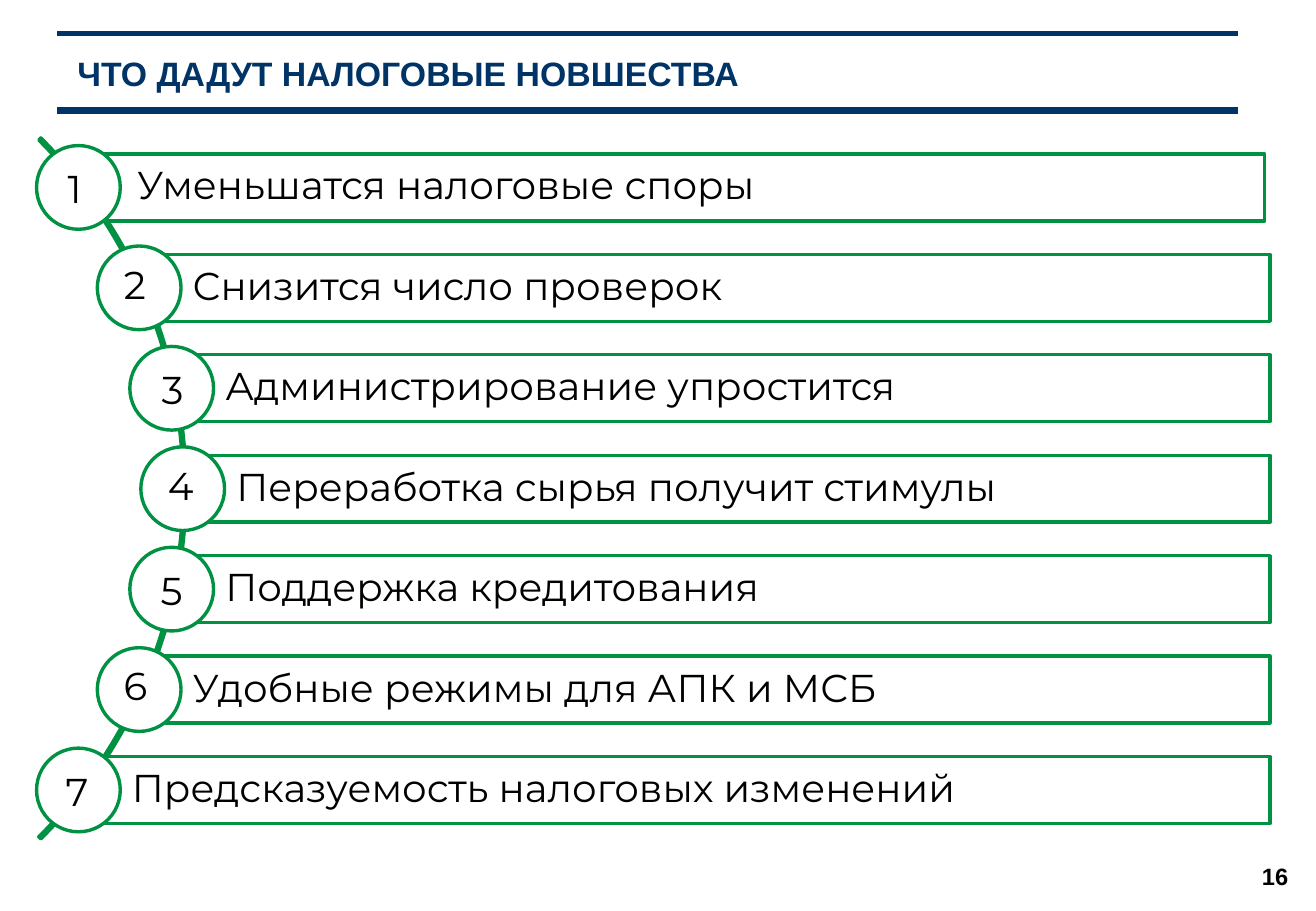
from lxml import etree
from pptx import Presentation
from pptx.dml.color import RGBColor
from pptx.enum.shapes import MSO_CONNECTOR as Link, MSO_SHAPE as Form
from pptx.enum.text import MSO_ANCHOR as Anchor, PP_ALIGN as Align
from pptx.oxml.ns import qn
from pptx.util import Cm, Pt

NAVY, GREEN, WHITE, BLACK = "003366", "009242", "FFFFFF", "000000"


def paint(shape, fill, line):
    """Set fill and outline; None leaves the part empty."""
    shape.shadow.inherit = False
    for part, color in ((shape.fill, fill), (shape.line.fill, line)):
        if color:
            part.solid()
            part.fore_color.rgb = RGBColor.from_string(color)
        else:
            part.background()
    if line:
        shape.line.width = Pt(2)


def write(shape, text, size, font, color, align=Align.LEFT, bold=False, anchor=Anchor.MIDDLE):
    frame = shape.text_frame
    frame.word_wrap = True
    frame.vertical_anchor = anchor
    para = frame.paragraphs[0]
    para.alignment = align
    span = para.add_run()
    span.text = text
    span.font.size = Pt(size)
    span.font.name = font
    span.font.bold = bold
    span.font.color.rgb = RGBColor.from_string(color)


deck = Presentation()
deck.slide_width, deck.slide_height = Cm(27.51), Cm(19.05)
page = deck.slides.add_slide(deck.slide_layouts[6])
shapes = page.shapes

# Header rules
for y, weight in ((2.31, 4.5), (0.71, 3)):
    rule = shapes.add_connector(Link.STRAIGHT, Cm(25.88), Cm(y), Cm(1.19), Cm(y))
    rule.line.color.rgb = RGBColor.from_string(NAVY)
    rule.line.width = Pt(weight)
    etree.SubElement(rule._element.spPr, qn("a:effectLst"))

# Page number and title
number = shapes.add_shape(Form.RECTANGLE, Cm(25.83), Cm(17.63), Cm(1.65), Cm(1.4))
paint(number, WHITE, None)
write(number, "16", 14, "Arial", BLACK, Align.CENTER, bold=True)
title = shapes.add_textbox(Cm(1.37), Cm(0.76), Cm(24.36), Cm(1.55))
write(title, "ЧТО ДАДУТ НАЛОГОВЫЕ НОВШЕСТВА", 20, "Arial", NAVY, bold=True)

# Arc behind the list
arc = shapes.add_shape(Form.BLOCK_ARC, Cm(-16.84), Cm(-0.15), Cm(20.73), Cm(20.73))
for index, value in enumerate((189, 27, 0.003)):
    arc.adjustments[index] = value
paint(arc, None, GREEN)

# Rows: text, circle centre, bar left, bar right, digit centre, digit top
rows = (
    ("Уменьшатся налоговые споры", 1.64, 1.75, 26.44, 1.56, 3.33),
    ("Снизится число проверок", 2.91, 2.91, 26.55, 2.82, 5.33),
    ("Администрирование упростится", 3.59, 3.59, 26.55, 3.61, 7.52),
    ("Переработка сырья получит стимулы", 3.82, 3.82, 26.55, 3.78, 9.53),
    ("Поддержка кредитования", 3.59, 3.59, 26.55, 3.59, 11.73),
    ("Удобные режимы для АПК и МСБ", 2.91, 2.91, 26.55, 2.83, 13.72),
    ("Предсказуемость налоговых изменений", 1.64, 1.64, 26.55, 1.61, 15.93),
)
FIRST, PITCH, BAR, CIRCLE, DIGIT = 3.92, 2.1, 1.4, 1.75, 1.57

for index, (text, center, left, right, digit_x, digit_y) in enumerate(rows):
    middle = FIRST + index * PITCH

    bar = shapes.add_shape(Form.RECTANGLE, Cm(left), Cm(middle - BAR / 2), Cm(right - left), Cm(BAR))
    paint(bar, WHITE, GREEN)
    write(bar, text, 23, "Montserrat", BLACK)
    frame = bar.text_frame
    frame.margin_left = Cm(1.12)
    frame.margin_top = frame.margin_right = frame.margin_bottom = Cm(0.15)
    frame.paragraphs[0].line_spacing = 0.9

    circle = shapes.add_shape(Form.OVAL, Cm(center - CIRCLE / 2), Cm(middle - CIRCLE / 2), Cm(CIRCLE), Cm(CIRCLE))
    paint(circle, WHITE, GREEN)

    digit = shapes.add_textbox(Cm(digit_x - DIGIT / 2), Cm(digit_y), Cm(DIGIT), Cm(1.24))
    write(digit, str(index + 1), 23, "Montserrat", BLACK, Align.CENTER, anchor=Anchor.TOP)

deck.save("out.pptx")
